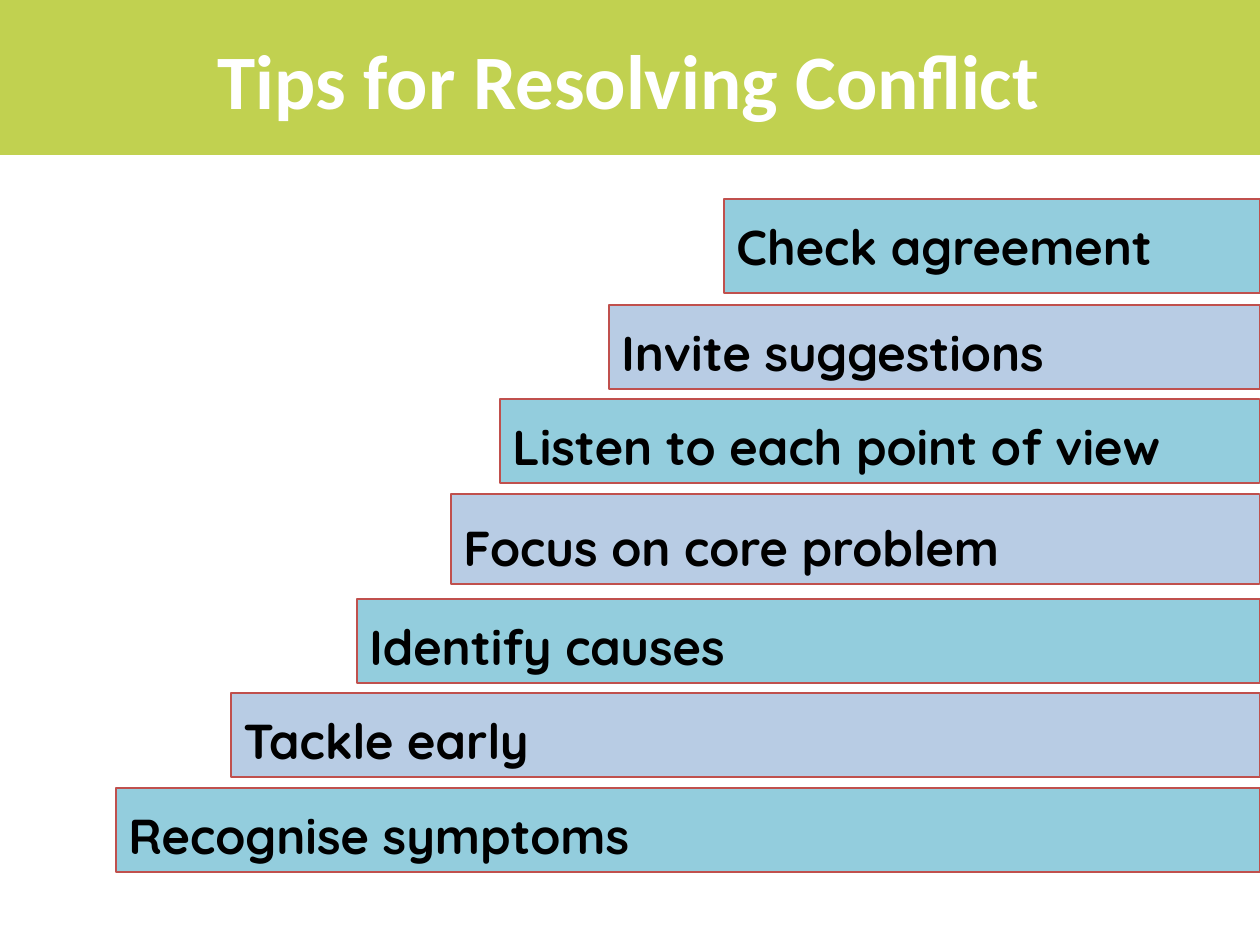
from pptx import Presentation
from pptx.dml.color import RGBColor
from pptx.enum.shapes import MSO_SHAPE
from pptx.enum.text import MSO_ANCHOR, PP_ALIGN
from pptx.oxml.ns import qn
from pptx.util import Emu, Pt
from lxml import etree

RECTANGLE = MSO_SHAPE.RECTANGLE
TOP, MIDDLE = MSO_ANCHOR.TOP, MSO_ANCHOR.MIDDLE
LEFT, CENTER = PP_ALIGN.LEFT, PP_ALIGN.CENTER

LIME = RGBColor(0xC1, 0xD1, 0x50)
AQUA = RGBColor(0x93, 0xCD, 0xDD)
BLUE = RGBColor(0x4F, 0x81, 0xBD)
RED = RGBColor(0xC0, 0x50, 0x4D)
BLACK = RGBColor(0, 0, 0)
WHITE = RGBColor(0xFF, 0xFF, 0xFF)

PX = 914400 // 126
PAGE_WIDTH, PAGE_HEIGHT = 1260, 945


def add_rectangle(left, top, width, height, fill):
    shape = page.shapes.add_shape(
        RECTANGLE, *(Emu(value * PX) for value in (left, top, width, height)))
    shape.shadow.inherit = False
    shape.fill.solid()
    shape.fill.fore_color.rgb = fill
    shape.line.fill.background()
    return shape


def write_text(box, text, *, font, size, color, align=LEFT, anchor=TOP, spacing=1.0):
    frame = box.text_frame
    frame.word_wrap = True
    frame.vertical_anchor = anchor
    para = frame.paragraphs[0]
    para.alignment = align
    para.line_spacing = spacing
    span = para.add_run()
    span.text = text
    span.font.name = font
    span.font.size = Pt(size)
    span.font.bold = True
    span.font.color.rgb = color


deck = Presentation()
deck.slide_width = Emu(PAGE_WIDTH * PX)
deck.slide_height = Emu(PAGE_HEIGHT * PX)
page = deck.slides.add_slide(deck.slide_layouts[6])

# Header band
add_rectangle(0, -2, PAGE_WIDTH, 157, LIME)

# Staircase of tips, top step first: text, left, top, height, line spacing
steps = [
    ("Check agreement", 724, 199, 94, 1.2),
    ("Invite suggestions", 609, 305, 84, 1.2),
    ("Listen to each point of view", 500, 399, 84, 1.2),
    ("Focus on core problem", 451, 494, 90, 1.3),
    ("Identify causes", 357, 599, 84, 1.2),
    ("Tackle early", 231, 693, 84, 1.2),
    ("Recognise symptoms", 116, 788, 84, 1.2),
]
for index, (tip, left, top, height, spacing) in enumerate(steps):
    is_blue = index % 2 == 1
    bar = add_rectangle(left, top, PAGE_WIDTH - left, height, BLUE if is_blue else AQUA)
    bar.line.color.rgb = RED
    bar.line.width = Pt(0.75)
    if is_blue:
        # Blue steps are 40% opaque
        fill_color = bar.fill._xPr.find(qn("a:solidFill"))[0]
        etree.SubElement(fill_color, qn("a:alpha")).set("val", "40000")
    write_text(bar, tip, font="Quicksand", size=28, color=BLACK, spacing=spacing)

# Title
title = page.shapes.add_textbox(
    Emu(62 * PX), Emu(0), Emu(1134 * PX), Emu(157 * PX))
write_text(title, "Tips for Resolving Conflict", font="Calibri", size=44,
           color=WHITE, align=CENTER, anchor=MIDDLE)

deck.save("out.pptx")
